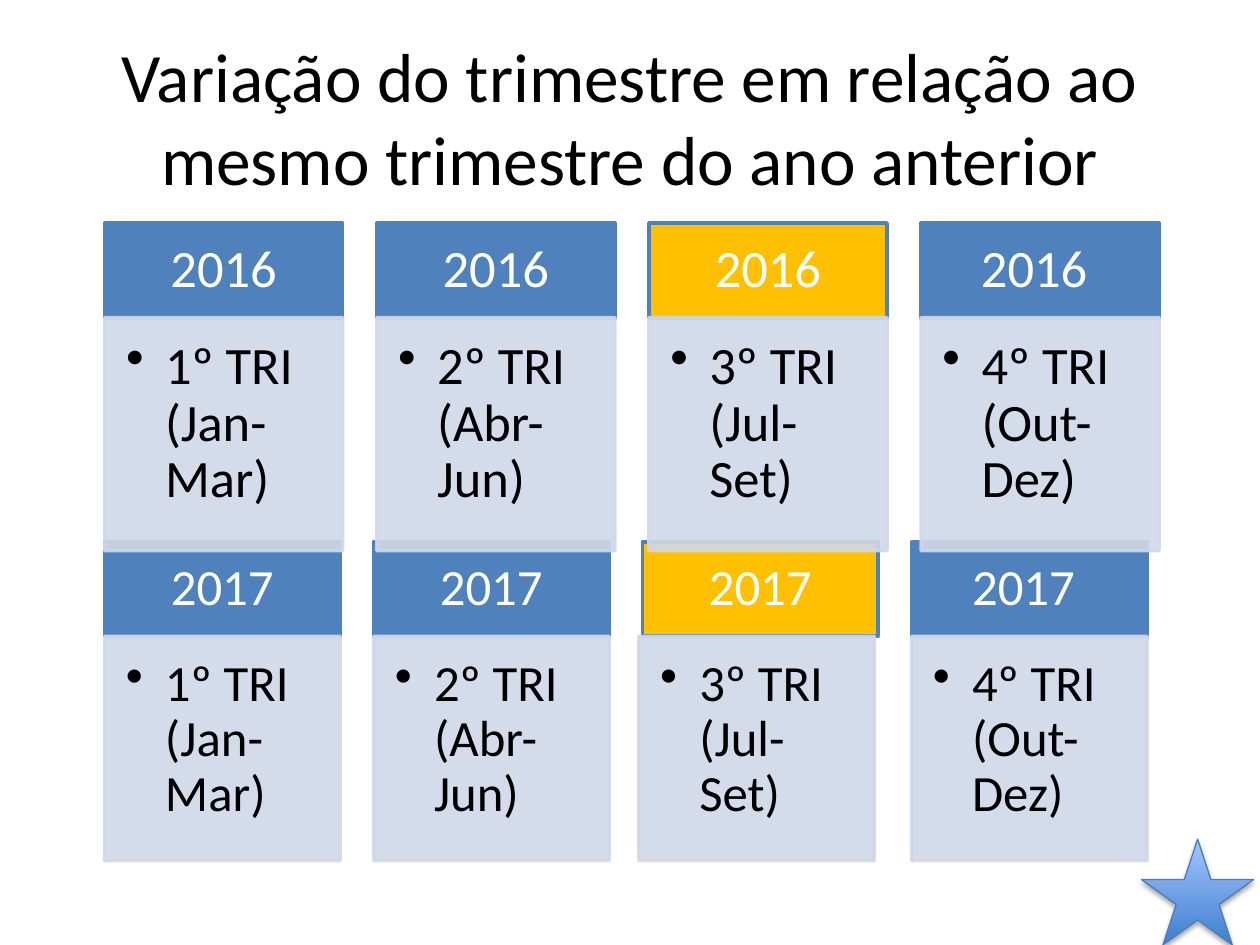
from lxml import etree
from pptx import Presentation
from pptx import util as u
from pptx.dml import color
from pptx.enum import shapes, text
from pptx.oxml import ns

COLORS = {
    "blue": "4F81BD", "amber": "FFC000", "pale": "D0D8E8",
    "black": "000000", "white": "FFFFFF",
    "star_bottom": "3F80CE", "star_top": "A4C4FF", "star_line": "4B7EBC",
}


def rgb(name):
    return color.RGBColor.from_string(COLORS[name])


def write_text(shape, words, size, ink="black", align=text.PP_ALIGN.CENTER,
               anchor=text.MSO_ANCHOR.MIDDLE, insets=(0.1, 0.05, 0.1, 0.05),
               spacing=None, bullet=False):
    frame = shape.text_frame
    frame.word_wrap = True
    frame.vertical_anchor = anchor
    (frame.margin_left, frame.margin_top,
     frame.margin_right, frame.margin_bottom) = map(u.Inches, insets)
    paragraph = frame.paragraphs[0]
    paragraph.alignment = align
    paragraph.line_spacing = spacing
    if bullet:
        properties = paragraph._p.get_or_add_pPr()
        properties.set("marL", str(u.Inches(0.31)))
        properties.set("indent", str(-u.Inches(0.31)))
        etree.SubElement(properties, ns.qn("a:buChar")).set("char", "•")
    run = paragraph.add_run()
    run.text = words
    run.font.name = "Calibri"
    run.font.size = u.Pt(size)
    run.font.color.rgb = rgb(ink)


presentation = Presentation()
presentation.slide_width = u.Inches(10)
presentation.slide_height = u.Inches(7.5)
slide = presentation.slides.add_slide(presentation.slide_layouts[6])

# Title
title = slide.shapes.add_textbox(u.Inches(0.5), u.Inches(0.3), u.Inches(9), u.Inches(1.25))
write_text(title, "Variação do trimestre em relação ao mesmo trimestre do ano anterior", 39.6)

# Quarter cards: the 2016 row lies over the 2017 row
quarters = ["1º TRI (Jan-Mar)", "2º TRI (Abr-Jun)", "3º TRI (Jul-Set)", "4º TRI (Out-Dez)"]
highlighted = 2
rows = [
    {"year": "2017", "top": 4.3, "width": 1.87, "pitch": 2.135, "header": 0.75,
     "body": 1.78, "size": 29, "nudge": -0.03},
    {"year": "2016", "top": 1.77, "width": 1.89, "pitch": 2.16, "header": 0.76,
     "body": 1.85, "size": 30, "nudge": 0},
]
for row in rows:
    for column, quarter in enumerate(quarters):
        left = 0.83 + column * row["pitch"]
        is_highlighted = column == highlighted
        body_left = left + (row["nudge"] if is_highlighted else 0)
        parts = [
            (left, row["top"], row["header"], "amber" if is_highlighted else "blue", "blue"),
            (body_left, row["top"] + 0.75, row["body"], "pale", "pale"),
        ]
        cards = []
        for x, y, height, fill, line in parts:
            card = slide.shapes.add_shape(
                shapes.MSO_SHAPE.RECTANGLE, u.Inches(x), u.Inches(y),
                u.Inches(row["width"]), u.Inches(height))
            card.shadow.inherit = False
            card.fill.solid()
            card.fill.fore_color.rgb = rgb(fill)
            card.line.color.rgb = rgb(line)
            card.line.width = u.Pt(2)
            cards.append(card)
        header, body = cards
        # Body fill and outline are 90 % opaque
        for paint in body._element.spPr.iter(ns.qn("a:srgbClr")):
            etree.SubElement(paint, ns.qn("a:alpha")).set("val", "90000")

        # The last year label carries a trailing space
        year = row["year"] + (" " if column == len(quarters) - 1 else "")
        write_text(header, year, row["size"], ink="white", spacing=0.9,
                   insets=(0.23, 0.13, 0.23, 0.13))
        write_text(body, quarter, row["size"], align=text.PP_ALIGN.LEFT,
                   anchor=text.MSO_ANCHOR.TOP, spacing=0.9, bullet=True,
                   insets=(0.17, 0.17, 0.23, 0.25))

# Star with gradient and soft shadow
star = slide.shapes.add_shape(shapes.MSO_SHAPE.STAR_5_POINT, u.Inches(9.06), u.Inches(6.66),
                              u.Inches(0.89), u.Inches(0.84))
star.fill.gradient()
star.fill.gradient_angle = 90
for stop, name, position in zip(star.fill.gradient_stops, ("star_bottom", "star_top"), (0, 1)):
    stop.color.rgb = rgb(name)
    stop.position = position
star.line.color.rgb = rgb("star_line")
star.line.width = u.Pt(0.75)
star.shadow.inherit = False
effects = star._element.spPr.find(ns.qn("a:effectLst"))
shadow = etree.SubElement(effects, ns.qn("a:outerShdw"), blurRad=str(u.Pt(3.1)),
                          dist=str(u.Pt(1.8)), dir="5400000", rotWithShape="0")
shadow_color = etree.SubElement(shadow, ns.qn("a:srgbClr"), val=COLORS["black"])
etree.SubElement(shadow_color, ns.qn("a:alpha"), val="35000")

presentation.save("out.pptx")
